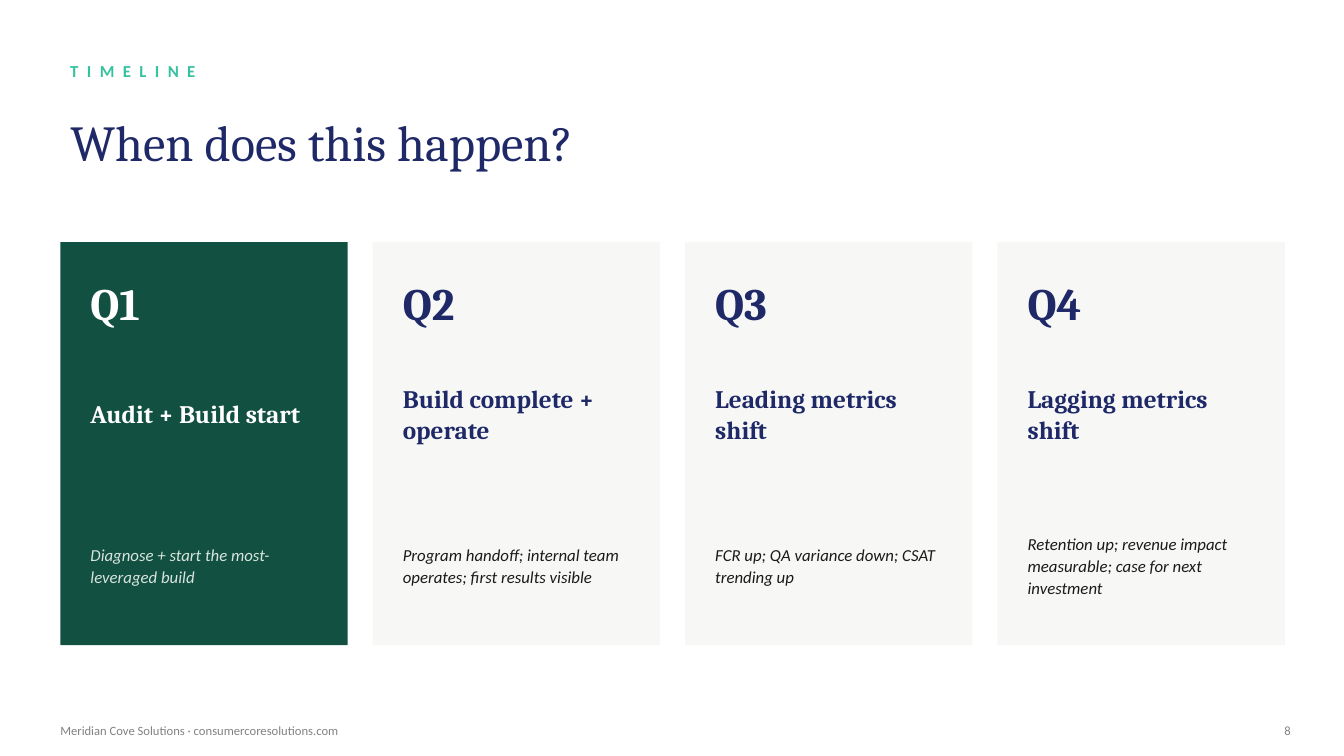
import pptx
import pptx.dml.color
import pptx.enum.shapes
import pptx.enum.text
import pptx.util

Cm = pptx.util.Cm
Pt = pptx.util.Pt
RGBColor = pptx.dml.color.RGBColor
PP_ALIGN = pptx.enum.text.PP_ALIGN

NAVY = RGBColor(0x1F, 0x29, 0x68)
MINT = RGBColor(0x36, 0xC1, 0x9F)
GREEN = RGBColor(0x12, 0x50, 0x41)
PALE_GREEN = RGBColor(0xD7, 0xE5, 0xDD)
OFF_WHITE = RGBColor(0xF7, 0xF8, 0xF6)
WHITE = RGBColor(0xFF, 0xFF, 0xFF)
INK = RGBColor(0x1A, 0x1A, 0x1A)
GREY = RGBColor(0x82, 0x82, 0x82)


def write(holder, text, font, size, color, bold=False, italic=False,
          leading=None, align=PP_ALIGN.LEFT):
    frame = holder.text_frame
    frame.word_wrap = True
    frame.auto_size = pptx.enum.text.MSO_AUTO_SIZE.NONE
    frame.vertical_anchor = pptx.enum.text.MSO_ANCHOR.MIDDLE
    paragraph = frame.paragraphs[0]
    paragraph.text = text
    paragraph.alignment = align
    if leading:
        paragraph.line_spacing = Pt(leading)
    paragraph.font.name = font
    paragraph.font.size = Pt(size)
    paragraph.font.color.rgb = color
    paragraph.font.bold = bold
    paragraph.font.italic = italic
    return paragraph


def add_text(left, top, width, height, *content, **style):
    box = slide.shapes.add_textbox(Cm(left), Cm(top), Cm(width), Cm(height))
    return write(box, *content, **style)


deck = pptx.Presentation()
deck.slide_width = Cm(33.86)
deck.slide_height = Cm(19.05)
slide = deck.slides.add_slide(deck.slide_layouts[5])

eyebrow = add_text(1.52, 1.27, 20.32, 1.02, "TIMELINE", "Calibri", 12, MINT, bold=True)
eyebrow.runs[0].font._element.set("spc", "600")

headline = slide.shapes.title
headline.left, headline.top = Cm(1.52), Cm(2.41)
headline.width, headline.height = Cm(30.48), Cm(2.29)
write(headline, "When does this happen?", "Cambria", 36, NAVY)

quarters = [
    ("Q1", "Audit + Build start", "Diagnose + start the most-leveraged build"),
    ("Q2", "Build complete + operate",
     "Program handoff; internal team operates; first results visible"),
    ("Q3", "Leading metrics shift", "FCR up; QA variance down; CSAT trending up"),
    ("Q4", "Lagging metrics shift",
     "Retention up; revenue impact measurable; case for next investment"),
]
CARD_LEFT, CARD_PITCH, CARD_WIDTH = 1.52, 7.87, 7.24
PADDING = 0.51
TEXT_WIDTH = CARD_WIDTH - 2 * PADDING

for index, (quarter, milestone, detail) in enumerate(quarters):
    if index == 0:
        card_color, heading_color, detail_color = GREEN, WHITE, PALE_GREEN
    else:
        card_color, heading_color, detail_color = OFF_WHITE, NAVY, INK
    left = CARD_LEFT + index * CARD_PITCH
    card = slide.shapes.add_shape(
        pptx.enum.shapes.MSO_SHAPE.RECTANGLE,
        Cm(left), Cm(6.1), Cm(CARD_WIDTH), Cm(10.16))
    card.shadow.inherit = False
    card.fill.solid()
    card.fill.fore_color.rgb = card_color
    card.line.fill.background()

    text_left = left + PADDING
    add_text(text_left, 6.86, TEXT_WIDTH, 1.52, quarter,
             "Cambria", 32, heading_color, bold=True)
    add_text(text_left, 8.89, TEXT_WIDTH, 3.05, milestone,
             "Cambria", 18, heading_color, bold=True, leading=22)
    add_text(text_left, 12.45, TEXT_WIDTH, 3.56, detail,
             "Calibri", 12, detail_color, italic=True, leading=16)

add_text(1.27, 18.03, 20.32, 0.76, "Meridian Cove Solutions · consumercoresolutions.com",
         "Calibri", 9, GREY)
add_text(31.75, 18.03, 1.02, 0.76, "8", "Calibri", 9, GREY, align=PP_ALIGN.RIGHT)

deck.save("out.pptx")
